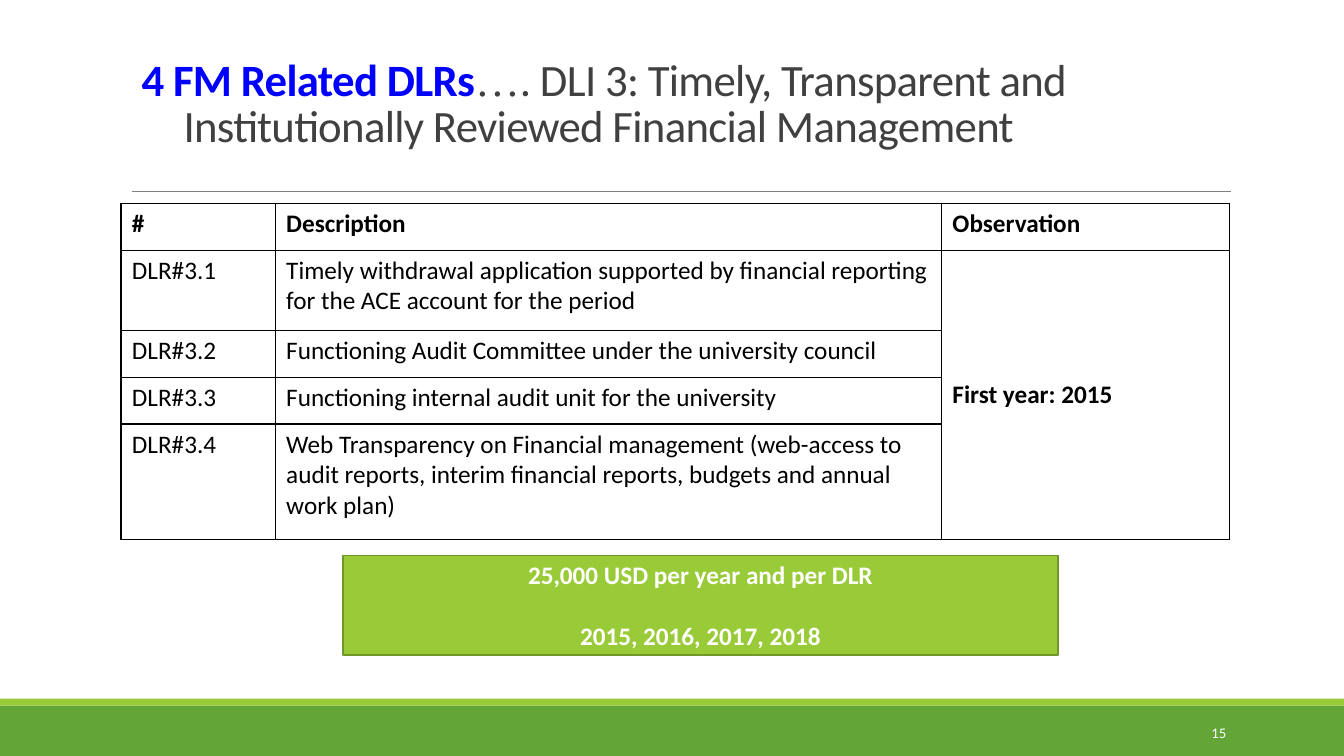
from lxml import etree
from pptx import Presentation
from pptx.dml.color import RGBColor
from pptx.enum.shapes import MSO_CONNECTOR as Connector, MSO_SHAPE as Shape
from pptx.enum.text import MSO_ANCHOR as Anchor, MSO_AUTO_SIZE as AutoSize, PP_ALIGN as Align
from pptx.oxml.ns import qn
from pptx.util import Pt

WIDTH, HEIGHT = 960, 540
GREEN, LIME, LIME_EDGE = "63A537", "99CB38", "719629"
BLACK, WHITE, GRAY, DARK, BLUE = "000000", "FFFFFF", "808080", "404040", "0000FF"

COLUMN_WIDTHS = [110.2, 475.9, 205.9]
ROW_HEIGHTS = [33.3, 57.6, 33.3, 33.3, 82.8]
TABLE_ROWS = [
    ["#", "Description", "Observation"],
    ["DLR#3.1", "Timely withdrawal application supported by financial reporting "
     "for the ACE account for the period", "First year: 2015"],
    ["DLR#3.2", "Functioning Audit Committee under the university council"],
    ["DLR#3.3", "Functioning internal audit unit for the university"],
    ["DLR#3.4", "Web Transparency on Financial management (web-access to audit reports, "
     "interim financial reports, budgets and annual work plan)"],
]


def color(value):
    return RGBColor.from_string(value)


def points(*values):
    return [Pt(value) for value in values]


def add_text(paragraph, text, size=18, fill=BLACK, bold=False, font="Calibri",
             align=None, spacing=None):
    run = paragraph.add_run()
    run.text = text
    run.font.name, run.font.size, run.font.bold = font, Pt(size), bold
    run.font.color.rgb = color(fill)
    if align is not None:
        paragraph.alignment = align
    if spacing is not None:
        run._r.get_or_add_rPr().set("spc", str(round(spacing * 100)))


def add_rectangle(slide, box, fill, edge=None):
    shape = slide.shapes.add_shape(Shape.RECTANGLE, *points(*box))
    shape.shadow.inherit = False
    shape.fill.solid()
    shape.fill.fore_color.rgb = color(fill)
    if edge:
        shape.line.color.rgb = color(edge)
        shape.line.width = Pt(1.25)
    else:
        shape.line.fill.background()
    return shape


def border_cell(cell):
    properties = cell._tc.get_or_add_tcPr()
    for side in ("a:lnL", "a:lnR", "a:lnT", "a:lnB"):
        line = etree.SubElement(properties, qn(side), w=str(Pt(1)))
        fill = etree.SubElement(line, qn("a:solidFill"))
        etree.SubElement(fill, qn("a:srgbClr"), val=BLACK)


def build_title(slide, box):
    title = slide.shapes.title
    title.left, title.top, title.width, title.height = points(*box)
    frame = title.text_frame
    frame.auto_size, frame.word_wrap = AutoSize.NONE, True
    frame.vertical_anchor = Anchor.BOTTOM
    frame.margin_left = frame.margin_right = Pt(7.2)
    frame.margin_bottom = Pt(37)
    paragraph = frame.paragraphs[0]
    paragraph.line_spacing = 0.85
    style = dict(size=32, align=Align.CENTER, spacing=-0.5)
    add_text(paragraph, " ", fill=DARK, **style)
    add_text(paragraph, "4 FM Related DLRs", fill=BLUE, bold=True, **style)
    add_text(paragraph, "…", fill=DARK, font="Times New Roman", **style)
    add_text(paragraph, ". DLI 3: Timely, Transparent and Institutionally Reviewed "
             "Financial Management", fill=DARK, **style)


def build_rule(slide, left, right, top):
    rule = slide.shapes.add_connector(Connector.STRAIGHT, *points(left, top, right, top))
    rule.line.color.rgb = color(GRAY)
    rule.line.width = Pt(0.5)
    etree.SubElement(rule._element.spPr, qn("a:effectLst"))


def build_table(slide, left, top):
    box = left, top, sum(COLUMN_WIDTHS), sum(ROW_HEIGHTS)
    table = slide.shapes.add_table(len(ROW_HEIGHTS), len(COLUMN_WIDTHS), *points(*box)).table
    table.first_row = table.horz_banding = False
    for column, width in zip(table.columns, COLUMN_WIDTHS):
        column.width = Pt(width)
    for row, height in zip(table.rows, ROW_HEIGHTS):
        row.height = Pt(height)
    for cell in table.iter_cells():
        border_cell(cell)
        cell.fill.background()
        cell.margin_left = cell.margin_right = Pt(7.9)
    # The observation covers all four results
    observation = table.cell(1, 2)
    observation.merge(table.cell(4, 2))
    observation.vertical_anchor = Anchor.MIDDLE
    for row_index, texts in enumerate(TABLE_ROWS):
        for column_index, text in enumerate(texts):
            paragraph = table.cell(row_index, column_index).text_frame.paragraphs[0]
            add_text(paragraph, text, bold=row_index == 0 or column_index == 2)


def build_amount(slide, box):
    frame = add_rectangle(slide, box, LIME, LIME_EDGE).text_frame
    frame.word_wrap = True
    frame.vertical_anchor = Anchor.MIDDLE
    style = dict(fill=WHITE, bold=True, align=Align.CENTER)
    add_text(frame.paragraphs[0], "25,000 USD per year and per DLR", **style)
    years = frame.add_paragraph()
    years.space_before = Pt(22)
    add_text(years, "2015, 2016, 2017, 2018", **style)


def build_footer(slide, left, top, width, height):
    add_rectangle(slide, (left, top, width, height), GREEN)
    add_rectangle(slide, (left, top - 5, width, 5), LIME)
    number = slide.shapes.add_textbox(*points(left + 780, top + 4.5, 103, 29))
    frame = number.text_frame
    frame.word_wrap = True
    frame.vertical_anchor = Anchor.MIDDLE
    add_text(frame.paragraphs[0], "15", size=10.5, fill=WHITE, align=Align.RIGHT)


def main():
    presentation = Presentation()
    presentation.slide_width, presentation.slide_height = points(WIDTH, HEIGHT)
    slide = presentation.slides.add_slide(presentation.slide_layouts[5])
    build_footer(slide, 0, HEIGHT - 36, WIDTH, 36)
    build_rule(slide, 94.3, 879, 136.8)
    build_table(slide, 86.4, 145.4)
    build_amount(slide, (244.8, 396.7, 511.2, 71.3))
    build_title(slide, (31.7, 31, 792, 114.5))
    presentation.save("out.pptx")


if __name__ == "__main__":
    main()
